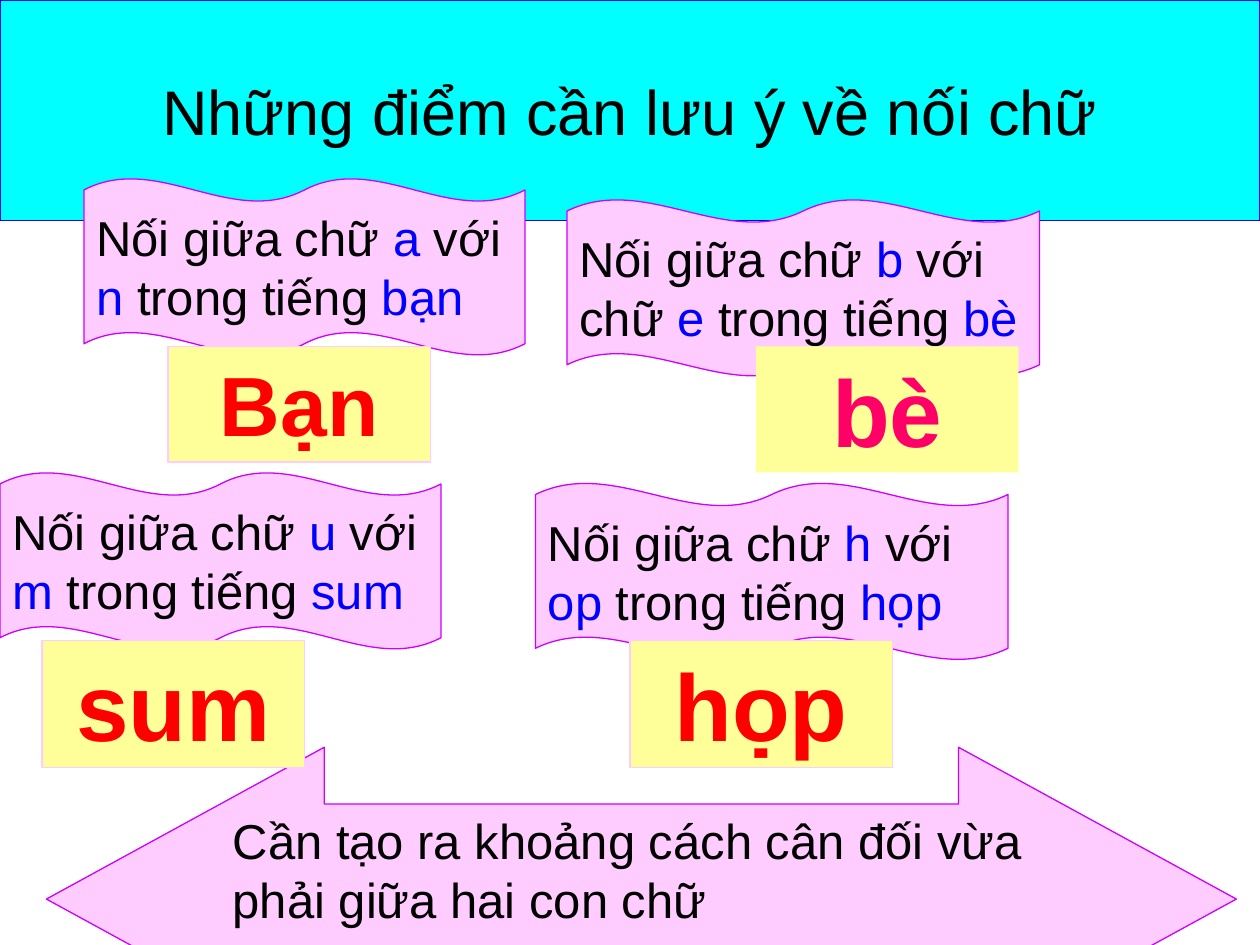
import pptx
import pptx.util
import pptx.dml.color
import pptx.enum.shapes
import pptx.enum.text

Pt = pptx.util.Pt
Shapes = pptx.enum.shapes.MSO_SHAPE
Align = pptx.enum.text.PP_ALIGN
Anchor = pptx.enum.text.MSO_ANCHOR

BLACK, BLUE, RED, ROSE = "000000", "0000FF", "FF0000", "FF0066"
CYAN, PINK, PURPLE, YELLOW = "00FFFF", "FFCCFF", "CC00FF", "FFFF99"

PAIRS = [
    ("Nối giữa chữ *a* với *n* trong tiếng *bạn*", (48, 102, 252, 101),
     "Bạn", (96, 198, 150, 66), 48, RED, PINK),
    ("Nối giữa chữ *b* với chữ *e* trong tiếng *bè*", (324, 114, 270, 101),
     "bè", (432, 198, 150, 72), 54, ROSE, None),
    ("Nối giữa chữ *u* với *m* trong tiếng *sum*", (0, 270, 252, 101),
     "sum", (24, 366, 150, 72.5), 54, RED, PINK),
    ("Nối giữa chữ *h* với *op* trong tiếng *họp*", (306, 276, 270, 101),
     "họp", (360, 366, 150, 72.5), 54, RED, PINK),
]


def color(value):
    """Return the colour for a hex string."""
    return pptx.dml.color.RGBColor.from_string(value)


def apply(target, values):
    """Set each attribute in values on the target."""
    for name, value in values.items():
        setattr(target, name, value)


def place(shape, box):
    """Move and size a shape with lengths in points."""
    apply(shape, dict(zip(("left", "top", "width", "height"), map(Pt, box))))


def paint(shape, fill, line):
    """Give a shape its fill and its thin outline."""
    shape.fill.solid()
    shape.fill.fore_color.rgb = color(fill)
    if line is None:
        shape.line.fill.background()
    else:
        shape.line.color.rgb = color(line)
        shape.line.width = Pt(0.75)


def write(shape, text, size, ink=BLACK, bold=False, align=Align.LEFT, anchor=Anchor.TOP):
    """Write one paragraph, with the parts between asterisks in blue."""
    apply(shape.text_frame, {"word_wrap": True, "vertical_anchor": anchor,
                             "auto_size": pptx.enum.text.MSO_AUTO_SIZE.NONE})
    paragraph = shape.text_frame.paragraphs[0]
    paragraph.alignment = align
    for index, part in enumerate(text.split("*")):
        if part:
            run = paragraph.add_run()
            run.text = part
            apply(run.font, {"name": "Arial", "size": Pt(size), "bold": bold})
            run.font.color.rgb = color(BLUE if index % 2 else ink)


def add_panel(slide, kind, box, fill, line, adjustments=()):
    """Add a painted preset shape without a shadow."""
    shape = slide.shapes.add_shape(kind, *map(Pt, box))
    shape.shadow.inherit = False
    for index, value in enumerate(adjustments):
        shape.adjustments[index] = value
    paint(shape, fill, line)
    return shape


def add_title(slide, text):
    """Format the title placeholder as a banner."""
    title = slide.shapes.title
    place(title, (0, 0, 720, 126))
    paint(title, CYAN, BLUE)
    write(title, text, 36, align=Align.CENTER, anchor=Anchor.MIDDLE)


def add_pair(slide, rule, wave_box, word, word_box, size, ink, line):
    """Add a wave with a joining rule and a card with its word."""
    wave = add_panel(slide, Shapes.DOUBLE_WAVE, wave_box, PINK, PURPLE, (0.065, 0))
    write(wave, rule, 28)
    card = add_panel(slide, Shapes.RECTANGLE, word_box, YELLOW, line)
    write(card, word, size, ink, bold=True, align=Align.CENTER)


def add_advice(slide, text):
    """Add the double arrow with the spacing advice."""
    arrow = add_panel(slide, Shapes.LEFT_RIGHT_ARROW, (26.5, 427, 680, 173.5),
                      PINK, PURPLE, (0.626, 0.915))
    write(arrow, text, 28)


def main():
    """Build and save the slide."""
    presentation = pptx.Presentation()
    apply(presentation, {"slide_width": Pt(720), "slide_height": Pt(540)})
    slide = presentation.slides.add_slide(presentation.slide_layouts[5])
    add_title(slide, "Những điểm cần lưu ý về nối chữ")
    add_advice(slide, "Cần tạo ra khoảng cách cân đối vừa phải giữa hai con chữ")
    for pair in PAIRS:
        add_pair(slide, *pair)
    presentation.save("out.pptx")


if __name__ == "__main__":
    main()
